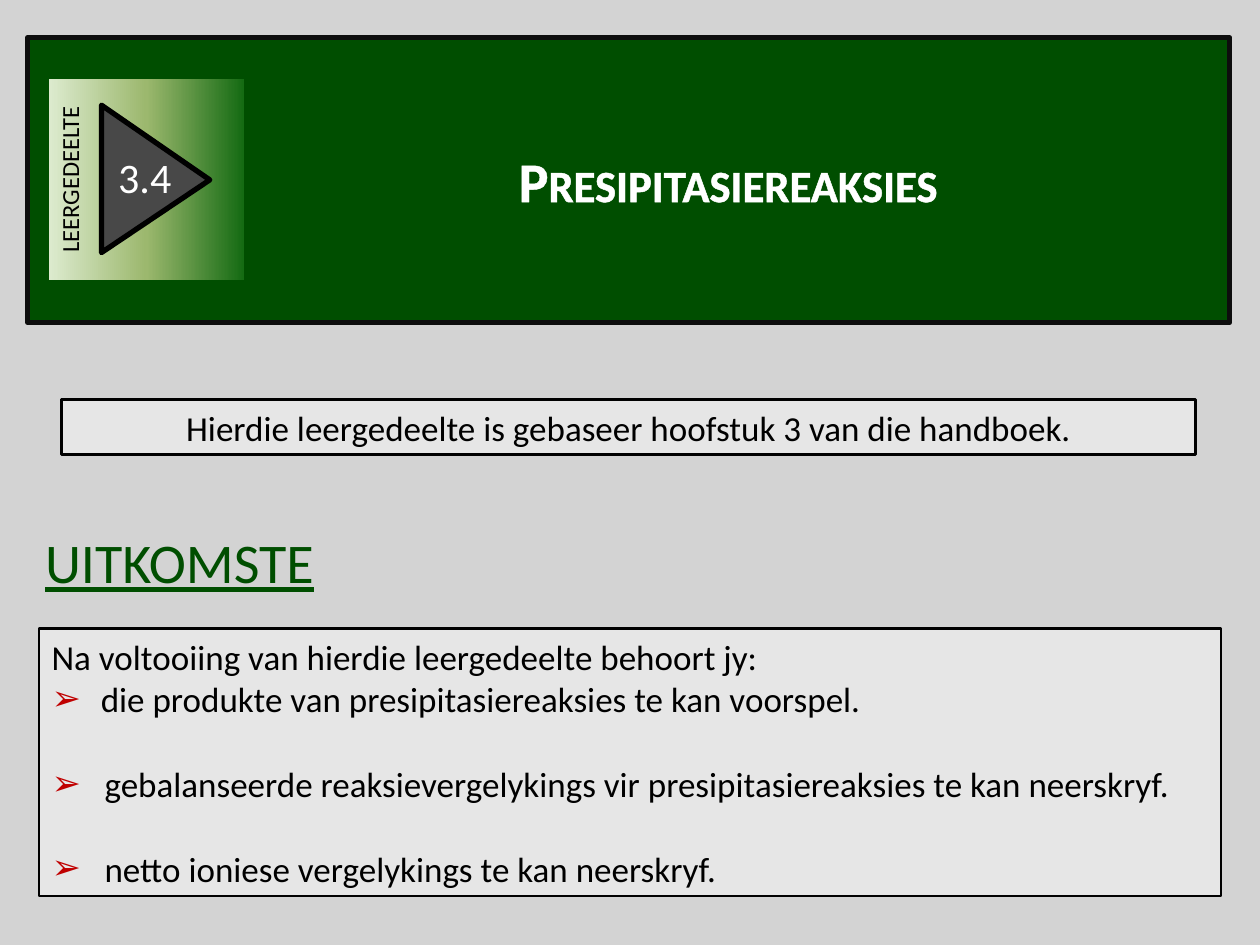
from copy import deepcopy

from lxml import etree
from pptx import Presentation
from pptx.dml.color import RGBColor
from pptx.enum.shapes import MSO_SHAPE
from pptx.enum.text import MSO_ANCHOR, MSO_AUTO_SIZE, PP_ALIGN
from pptx.oxml.ns import qn
from pptx.util import Inches, Pt

RECTANGLE = MSO_SHAPE.RECTANGLE
TRIANGLE = MSO_SHAPE.ISOSCELES_TRIANGLE
TOP, MIDDLE = MSO_ANCHOR.TOP, MSO_ANCHOR.MIDDLE
LEFT, CENTER = PP_ALIGN.LEFT, PP_ALIGN.CENTER
NO_AUTOFIT = MSO_AUTO_SIZE.NONE

FONT = "Calibri"
BLACK = RGBColor(0x00, 0x00, 0x00)
WHITE = RGBColor(0xFF, 0xFF, 0xFF)
GREEN = RGBColor(0x00, 0x4E, 0x00)
BACKDROP = RGBColor(0xD3, 0xD3, 0xD3)
PANEL = RGBColor(0xE6, 0xE6, 0xE6)
BANNER_EDGE = RGBColor(0x0D, 0x0D, 0x0D)
ARROW_GREY = RGBColor(0x48, 0x48, 0x48)
BULLET_RED = RGBColor(0xC0, 0x00, 0x00)
BADGE_STOPS = [
    (0, RGBColor(0xDD, 0xEB, 0xCF)),
    (0.5, RGBColor(0x9C, 0xB8, 0x6E)),
    (1, RGBColor(0x15, 0x6B, 0x13)),
]

TITLE = "Presipitasiereaksies"
BADGE_LABEL = "LEERGEDEELTE"
BADGE_NUMBER = "3.4"
SOURCE_NOTE = "Hierdie leergedeelte is gebaseer hoofstuk 3 van die handboek."
HEADING = "UITKOMSTE"
INTRO = "Na voltooiing van hierdie leergedeelte behoort jy:"
OUTCOMES = [
    ("die produkte van presipitasiereaksies te kan voorspel.", 0.39, 0),
    ("gebalanseerde reaksievergelykings vir presipitasiereaksies te kan neerskryf.", 0.42, 24.4),
    ("netto ioniese vergelykings te kan neerskryf.", 0.42, 24.4),
]


def place(shape, left, top, width, height):
    shape.left, shape.top = Inches(left), Inches(top)
    shape.width, shape.height = Inches(width), Inches(height)


def paint(shape, fill, line, weight):
    shape.fill.solid()
    shape.fill.fore_color.rgb = fill
    shape.line.color.rgb = line
    shape.line.width = Pt(weight)


def add_shape(shapes, kind, *frame):
    shape = shapes.add_shape(kind, *map(Inches, frame))
    shape.shadow.inherit = False
    return shape


def set_frame(shape, anchor=TOP, wrap=True):
    frame = shape.text_frame
    frame.auto_size = NO_AUTOFIT
    frame.word_wrap = wrap
    frame.vertical_anchor = anchor
    return frame


def write(para, text, size, color=BLACK, align=LEFT):
    para.alignment = align
    span = para.add_run()
    span.text = text
    font = span.font
    font.name, font.size = FONT, Pt(size)
    font.color.rgb = color
    return span


def outline(span, color, weight):
    line = etree.Element(qn("a:ln"), w=str(Pt(weight)))
    fill = etree.SubElement(line, qn("a:solidFill"))
    etree.SubElement(fill, qn("a:srgbClr"), val=str(color))
    span.font._element.insert(0, line)


def set_bullet(para, indent=0, bullet=None):
    properties = para._p.get_or_add_pPr()
    properties.set("marL", str(Inches(indent)))
    properties.set("indent", str(-Inches(indent)))
    if bullet is None:
        etree.SubElement(properties, qn("a:buNone"))
        return
    color = etree.SubElement(properties, qn("a:buClr"))
    etree.SubElement(color, qn("a:srgbClr"), val=str(BULLET_RED))
    etree.SubElement(properties, qn("a:buFont"), typeface=FONT)
    etree.SubElement(properties, qn("a:buChar"), char=bullet)


def add_banner(page):
    banner = add_shape(page.shapes, RECTANGLE, 0.22, 0.3, 9.54, 2.26)
    paint(banner, GREEN, BANNER_EDGE, 3)
    page.shapes._spTree.insert(2, banner._element)

    title = page.shapes.title
    place(title, 2.11, 1.11, 7.34, 0.64)
    span = write(set_frame(title).paragraphs[0], TITLE, 32, WHITE, CENTER)
    span.font.bold = True
    span.font._element.set("cap", "small")
    outline(span, WHITE, 0.75)


def add_badge(page):
    badge = page.shapes.add_group_shape().shapes
    label = add_shape(badge, RECTANGLE, 0.36, 0.65, 1.6, 1.55)
    label.rotation = 270
    label.line.fill.background()
    label.fill.gradient()
    label.fill.gradient_angle = 270
    stop_list = label._element.spPr.find(".//" + qn("a:gsLst"))
    stop_list.append(deepcopy(stop_list[-1]))
    for stop, (position, color) in zip(label.fill.gradient_stops, BADGE_STOPS):
        stop.position = position
        stop.color.rgb = color
    write(set_frame(label).paragraphs[0], BADGE_LABEL, 14, align=CENTER)

    arrow = add_shape(badge, TRIANGLE, 0.65, 0.99, 1.17, 0.86)
    arrow.rotation = 90
    arrow.adjustments[0] = 0.507
    paint(arrow, ARROW_GREY, BLACK, 3)

    number = badge.add_textbox(*map(Inches, (0.84, 1.15, 0.63, 0.5)))
    write(set_frame(number, wrap=False).paragraphs[0], BADGE_NUMBER, 24, WHITE)


def add_outcomes(page):
    heading = page.shapes.add_textbox(*map(Inches, (0.26, 4.14, 2.67, 0.64)))
    span = write(set_frame(heading).paragraphs[0], HEADING, 32, GREEN)
    span.font.underline = True
    outline(span, BLACK, 0.25)

    body = page.placeholders[1]
    place(body, 0.31, 4.99, 9.38, 2.12)
    paint(body, PANEL, BLACK, 1.5)
    frame = set_frame(body, MIDDLE)
    intro = frame.paragraphs[0]
    intro.space_before = Pt(0)
    set_bullet(intro)
    write(intro, INTRO, 20)
    for text, indent, gap in OUTCOMES:
        para = frame.add_paragraph()
        para.space_before = Pt(gap)
        set_bullet(para, indent, "➢")
        write(para, text, 20)


def add_source_note(page):
    note = add_shape(page.shapes, RECTANGLE, 0.49, 3.17, 9, 0.44)
    paint(note, PANEL, BLACK, 1.5)
    write(set_frame(note, MIDDLE).paragraphs[0], SOURCE_NOTE, 20, align=CENTER)


def main():
    deck = Presentation()
    deck.slide_width, deck.slide_height = Inches(10), Inches(7.5)
    page = deck.slides.add_slide(deck.slide_layouts[1])
    page.background.fill.solid()
    page.background.fill.fore_color.rgb = BACKDROP
    add_banner(page)
    add_badge(page)
    add_outcomes(page)
    add_source_note(page)
    deck.save("out.pptx")


if __name__ == "__main__":
    main()
